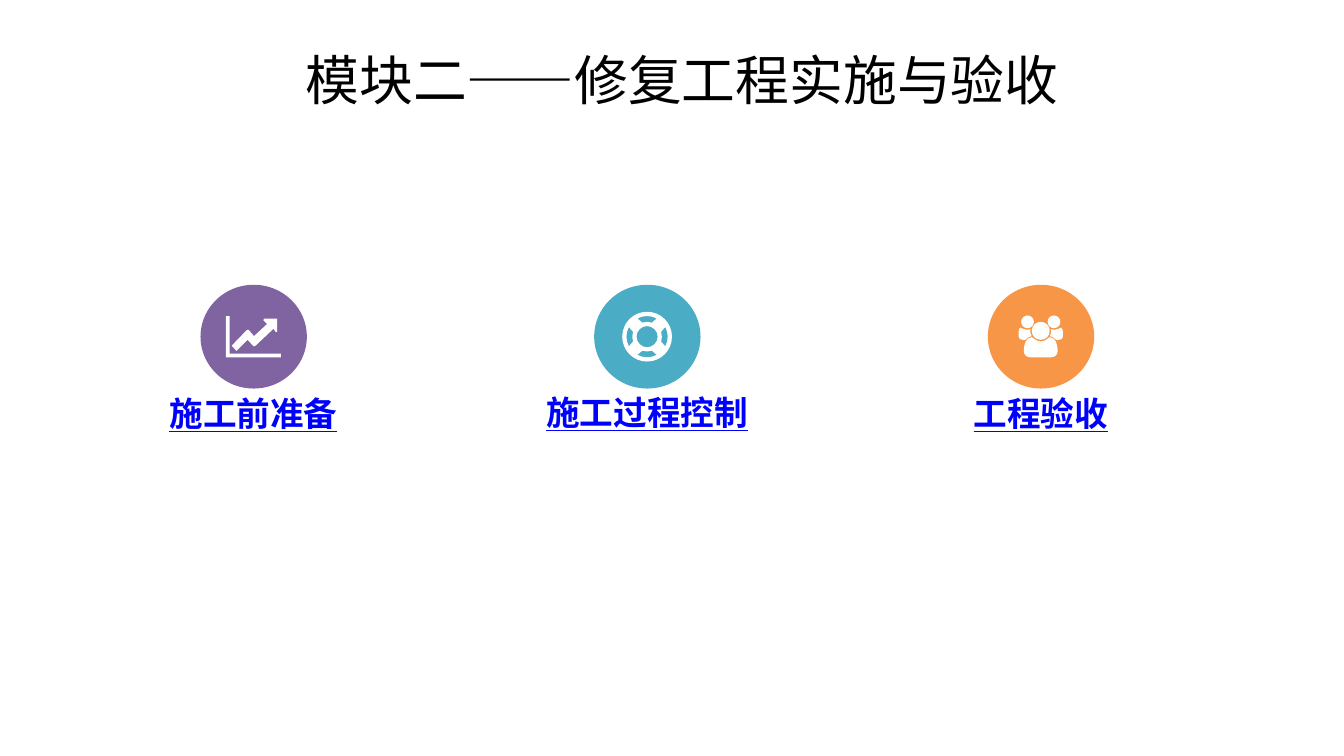
from math import cos, radians, sin, tan

from lxml.etree import SubElement
from pptx import Presentation
from pptx.dml.color import RGBColor as Color
from pptx.enum.shapes import MSO_SHAPE as Preset
from pptx.enum.text import MSO_ANCHOR as Anchor, PP_ALIGN as Align
from pptx.oxml.ns import qn
from pptx.util import Cm, Pt

COLORS = {
    "title": "000000",
    "link": "0000FF",
    "icon": "FFFFFF",
    "preparation": "8064A2",
    "control": "4BACC6",
    "acceptance": "F79646",
}
FONT = "Noto Sans CJK SC"
UNITS = 1000

deck = Presentation()
deck.slide_width, deck.slide_height = Cm(25.4), Cm(14.28)
page = deck.slides.add_slide(deck.slide_layouts[6])


def add_text(text, left, top, width, height, color, font_format):
    box = page.shapes.add_textbox(Cm(left), Cm(top), Cm(width), Cm(height))
    frame_format = {
        "word_wrap": True, "vertical_anchor": Anchor.MIDDLE,
        "margin_left": 0, "margin_right": 0, "margin_top": 0, "margin_bottom": 0,
    }
    for name, value in frame_format.items():
        setattr(box.text_frame, name, value)
    para = box.text_frame.paragraphs[0]
    para.alignment = Align.CENTER
    span = para.add_run()
    span.text = text
    for name, value in font_format.items():
        setattr(span.font, name, value)
    span.font.color.rgb = Color.from_string(COLORS[color])
    SubElement(span.font._element, qn("a:ea"), typeface=FONT)


def arc(x, y, radius, start=0, end=360, pieces=4):
    turn = radians(end - start) / pieces
    pull = 4 / 3 * tan(turn / 4)
    points = [(x + radius * cos(radians(start)), y + radius * sin(radians(start)))]
    for piece in range(pieces):
        first = radians(start) + piece * turn
        for angle, bend in ((first, pull), (first + turn, -pull), (first + turn, 0)):
            points.append((x + radius * (cos(angle) - bend * sin(angle)),
                           y + radius * (sin(angle) + bend * cos(angle))))
    return points


axes = [(-0.52, -0.39), (-0.45, -0.39), (-0.45, 0.32),
        (0.52, 0.32), (0.52, 0.39), (-0.52, 0.39)]
arrow = [(0.45, -0.09), (0.42, -0.09), (0.38, -0.15), (0.03, 0.18), (0, 0.18),
         (-0.11, 0.06), (-0.32, 0.27), (-0.41, 0.17), (-0.12, -0.13), (-0.09, -0.13),
         (0.01, -0.01), (0.26, -0.24), (0.19, -0.31), (0.2, -0.34), (0.45, -0.34)]

lifebuoy = [arc(0, 0, 0.47), arc(0, 0, 0.2)]
for middle in range(0, 360, 90):
    inner = arc(0, 0, 0.28, middle + 19, middle - 19, 1)
    lifebuoy.append(arc(0, 0, 0.39, middle - 28, middle + 28, 1)
                    + inner[:1] * 3 + inner[1:])

half_body = [(0, 0.09), (0.1, 0.09), (0.14, 0.01), (0.17, 0.01), (0.29, 0.01),
             (0.32, 0.17), (0.32, 0.27), (0.32, 0.34), (0.27, 0.39), (0.19, 0.39)]
other_half = [(-x, y) for x, y in reversed(half_body)]
shoulder = [(0.34, 0.06), (0.29, 0.06), (0.29, 0.06), (0.29, 0.06),
            (0.24, 0.01), (0.21, -0.01), (0.17, -0.01),
            (0.19, -0.04), (0.2, -0.08), (0.2, -0.11),
            (0.2, -0.12), (0.2, -0.13), (0.19, -0.14),
            (0.22, -0.13), (0.24, -0.13), (0.26, -0.13),
            (0.32, -0.13), (0.37, -0.17), (0.38, -0.17),
            (0.42, -0.17), (0.42, -0.07), (0.42, -0.01),
            (0.42, 0.04), (0.39, 0.06), (0.34, 0.06)]
people = [half_body + other_half[:1] * 3 + other_half[1:], arc(0, -0.11, 0.17)]
for side in (-1, 1):
    people.append([(side * x, y) for x, y in shoulder])
    people.append(arc(side * 0.25, -0.28, 0.12))

steps = [
    ("施工前准备", "preparation", 7.42, [axes, arrow], False),
    ("施工过程控制", "control", 7.4, lifebuoy, True),
    ("工程验收", "acceptance", 7.42, people, True),
]
center_y = 6.36
link_format = {"name": FONT, "size": Pt(18), "bold": True, "underline": True}

for index, (label, color, label_top, contours, curved) in enumerate(steps):
    center_x = 4.79 + 7.44 * index
    add_text(label, center_x - 2.86, label_top, 5.72, 0.76, "link", link_format)
    disc = page.shapes.add_shape(
        Preset.OVAL, Cm(center_x - 1), Cm(center_y - 0.98), Cm(2.01), Cm(1.96))
    placed = [[((center_x + x) * UNITS, (center_y + y) * UNITS) for x, y in contour]
              for contour in contours]
    builder = page.shapes.build_freeform(*placed[0][0], scale=Cm(1) / UNITS)
    builder.add_line_segments(placed[0][1:])
    for contour in placed[1:]:
        builder.move_to(*contour[0])
        builder.add_line_segments(contour[1:])
    icon = builder.convert_to_shape()
    if curved:
        lines = list(icon._element.iter(qn("a:lnTo")))
        for first, second, third in zip(lines[::3], lines[1::3], lines[2::3]):
            first.tag = qn("a:cubicBezTo")
            for line in (second, third):
                first.append(line[0])
                line.getparent().remove(line)
    for shape, fill in ((disc, color), (icon, "icon")):
        shape.shadow.inherit = False
        shape.fill.solid()
        shape.fill.fore_color.rgb = Color.from_string(COLORS[fill])
        shape.line.fill.background()

add_text("模块二——修复工程实施与验收", 1.69, 1, 22.4, 0.99, "title",
         {"name": FONT, "size": Pt(28.8)})

deck.save("out.pptx")
